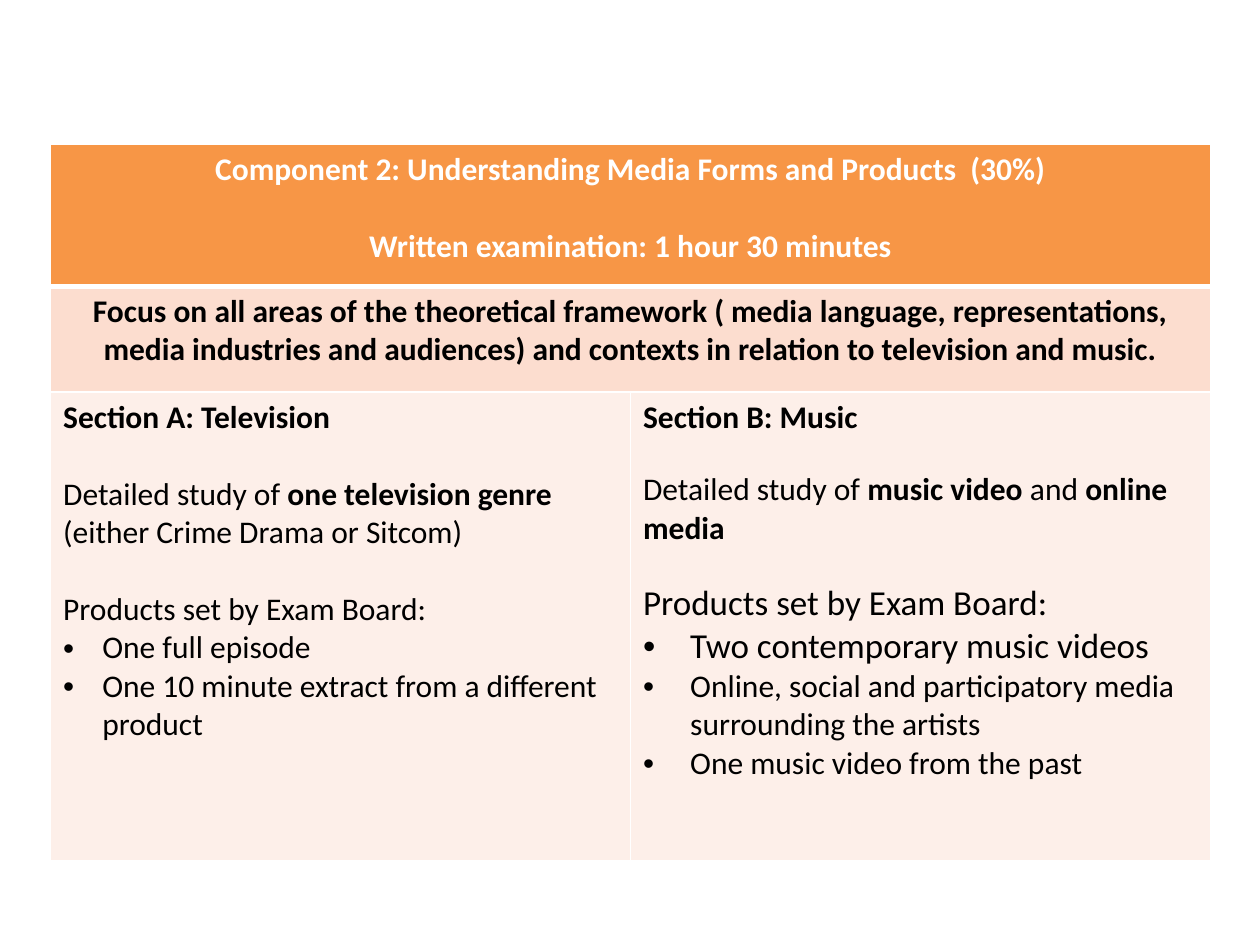
"""Build a one-slide table outlining the Component 2 media examination."""
from lxml import etree
from pptx import Presentation
from pptx import util as u
from pptx.dml import color
from pptx.enum import text
from pptx.oxml import ns


def rgb(value):
    return color.RGBColor.from_string(value)


class Deck:
    font, ink, white = "Calibri", "000000", "FFFFFF"
    accent, band, pale = "F79646", "FCDDCF", "FDEFE9"

    def __init__(self, prs):
        self.s = prs.slides.add_slide(prs.slide_layouts[6])

    def table(self, left, top, widths, heights):
        frame = self.s.shapes.add_table(
            len(heights), len(widths), u.Cm(left), u.Cm(top),
            u.Cm(sum(widths)), u.Cm(sum(heights)))
        tbl = frame.table
        tbl.first_row = tbl.horz_banding = False
        for col, width in zip(tbl.columns, widths):
            col.width = u.Cm(width)
        for row, height in zip(tbl.rows, heights):
            row.height = u.Cm(height)
        return tbl

    def borders(self, cell, top=1, bottom=1):
        props = cell._tc.get_or_add_tcPr()
        for side, width in zip("LRTB", (1, 1, top, bottom)):
            ln = etree.SubElement(props, ns.qn(f"a:ln{side}"), w=str(u.Pt(width)))
            fill = etree.SubElement(ln, ns.qn("a:solidFill"))
            etree.SubElement(fill, ns.qn("a:srgbClr"), val=self.white)

    def cell(self, cell, fill, paragraphs, ink=ink, **edges):
        self.borders(cell, **edges)
        cell.fill.solid()
        cell.fill.fore_color.rgb = rgb(fill)
        tf = cell.text_frame
        for i, options in enumerate(paragraphs):
            p = tf.add_paragraph() if i else tf.paragraphs[0]
            self.paragraph(p, ink, **options)

    def paragraph(self, p, ink, runs, size=18, gap=0, indent=0, center=False):
        p.alignment = text.PP_ALIGN.CENTER if center else text.PP_ALIGN.LEFT
        if gap:
            p.space_before = u.Pt(gap)
        if indent:
            self.bullet(p, indent)
        for words, bold in runs:
            r = p.add_run()
            r.text = words
            r.font.name, r.font.size, r.font.bold = self.font, u.Pt(size), bold
            r.font.color.rgb = rgb(ink)

    def bullet(self, p, indent):
        props = p._p.get_or_add_pPr()
        props.set("marL", str(u.Cm(indent)))
        props.set("indent", str(-u.Cm(indent)))
        etree.SubElement(props, ns.qn("a:buFont"), typeface="Arial")
        etree.SubElement(props, ns.qn("a:buChar"), char="•")


def para(*runs, **options):
    return dict(runs=runs, **options)


def main():
    prs = Presentation()
    prs.slide_width, prs.slide_height = u.Cm(25.4), u.Cm(19.05)
    deck = Deck(prs)
    tbl = deck.table(1.02, 2.9, [11.69, 11.69], [2.87, 2.13, 9.45])
    for row in range(2):
        tbl.cell(row, 0).merge(tbl.cell(row, 1))

    heading = [
        para(("Component 2: Understanding Media Forms and Products  (30%)", True), center=True),
        para(("Written examination: 1 hour 30 minutes", True), center=True, gap=22),
    ]
    focus = [para(("Focus on all areas of the theoretical framework ( media language, "
                   "representations, media industries and audiences) and contexts in "
                   "relation to television and music.", True), center=True)]
    television = [
        para(("Section A: Television", True)),
        para(("Detailed study of ", False), ("one television genre ", True),
             ("(either Crime Drama or Sitcom)", False), gap=22),
        para(("Products set by Exam Board:", False), gap=22),
        para(("One full episode", False), indent=0.79),
        para(("One 10 minute extract from a different product", False), indent=0.79),
    ]
    music = [
        para(("Section B: Music", True)),
        para(("Detailed study of ", False), ("music video ", True), ("and ", False),
             ("online media", True), gap=19.5),
        para(("Products set by Exam Board:", False), size=20, gap=19.5),
        para(("Two contemporary music videos", False), size=20, indent=0.95),
        para(("Online, social and participatory media surrounding the artists", False),
             indent=0.95),
        para(("One music video from the past", False), indent=0.95),
    ]

    for col, (title, summary, section) in enumerate(
            [(heading, focus, television), ([], [], music)]):
        deck.cell(tbl.cell(0, col), deck.accent, title, ink=deck.white, bottom=3)
        deck.cell(tbl.cell(1, col), deck.band, summary, top=3)
        deck.cell(tbl.cell(2, col), deck.pale, section)
    prs.save("out.pptx")


if __name__ == "__main__":
    main()
